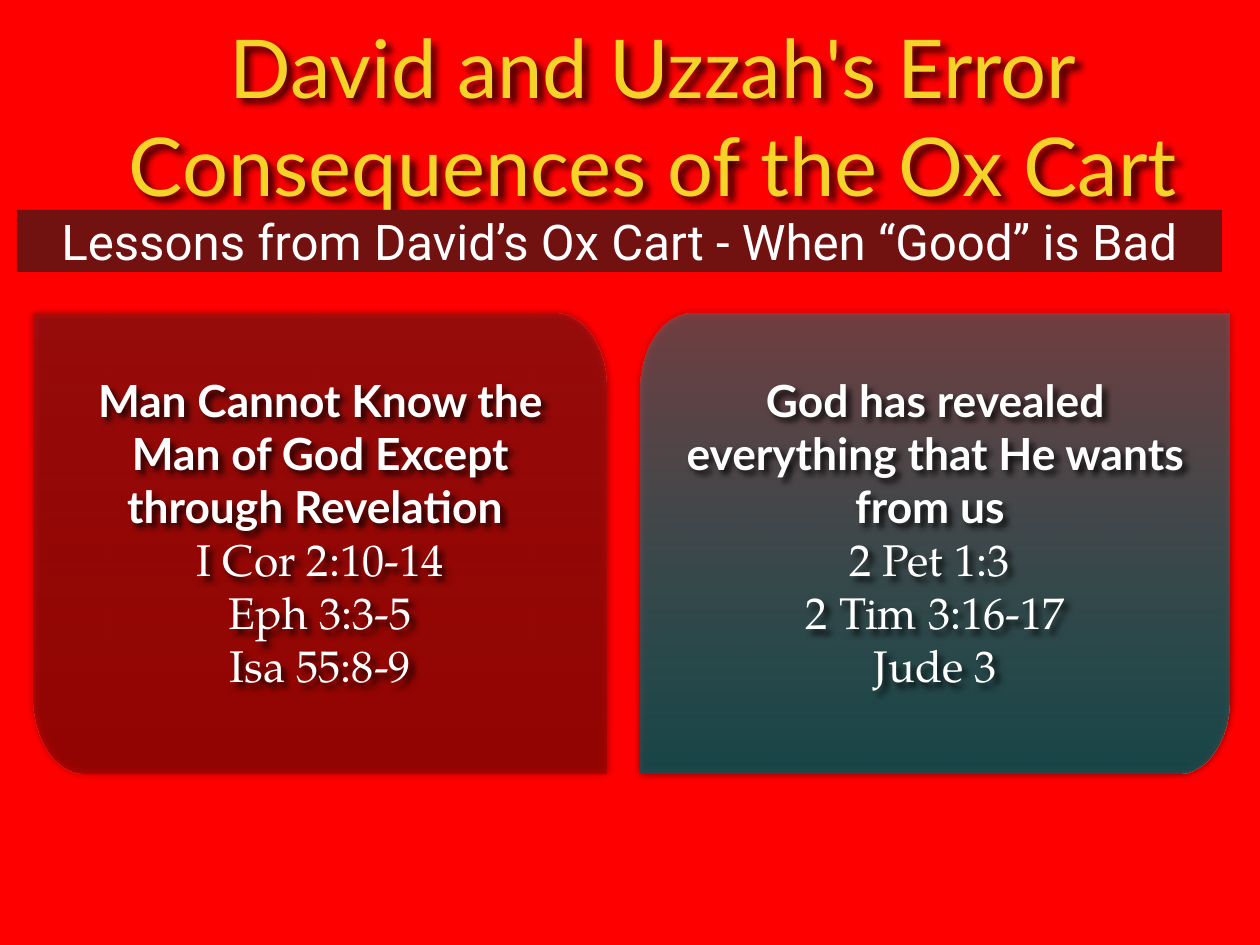
from dataclasses import dataclass
from math import cos, pi, sin

from lxml.etree import SubElement
from pptx import Presentation
from pptx.dml.color import RGBColor
from pptx.enum.text import MSO_ANCHOR as Anchor, MSO_AUTO_SIZE as AutoSize, PP_ALIGN as Align
from pptx.oxml.ns import qn
from pptx.util import Inches, Pt


@dataclass(frozen=True)
class Theme:
    background: str = "FF0000"
    title: str = "F5D328"
    text: str = "FFFFFF"
    banner: str = "711211"
    shadow: str = "000000"
    title_size: int = 66
    banner_size: int = 40
    panel_size: int = 36
    sans: str = "Lato"
    banner_font: str = "Roboto"
    serif: str = "TeX Gyre Pagella"


THEME = Theme()
TITLE = ["David and Uzzah's Error", "Consequences of the Ox Cart"]
BANNER = ["Lessons from David’s Ox Cart - When “Good” is Bad"]
PANELS = [
    {
        "heading": "Man Cannot Know the Man of God Except through Revelation ",
        "verses": ["I Cor 2:10-14", "Eph 3:3-5", "Isa 55:8-9"],
        "left": 0.38, "width": 6.47, "mirrored": True,
        "stops": [("971817", 51), ("720C04", 41)],
    },
    {
        "heading": "God has revealed everything that He wants from us ",
        "verses": ["2 Pet 1:3 ", "2 Tim 3:16-17", "Jude 3"],
        "left": 7.23, "width": 6.65, "mirrored": False,
        "stops": [("00A6AC", 37), ("005C5F", 76)],
    },
]
TITLE_BOX = (0.52, 0.19, 13.7, 2.22)
BANNER_BOX = (0.19, 2.37, 13.6, 0.7)
PANEL_TOP, PANEL_HEIGHT = 3.54, 5.19
CORNER_WIDTH, CORNER_HEIGHT, CORNER_STEPS = 0.58, 0.86, 24
TEXT_TOP, TEXT_WIDTH, TEXT_HEIGHT = 4.19, 6.07, 3.64


def color(value):
    return RGBColor.from_string(value)


def apply(target, values):
    for name, value in values.items():
        setattr(target, name, value)


def place(shape, box):
    apply(shape, dict(zip(("left", "top", "width", "height"), map(Inches, box))))


def text_format(font, size, fill, bold=False):
    return {"name": font, "size": Pt(size), "bold": bold}, fill


def write(shape, lines):
    frame = shape.text_frame
    apply(frame, {
        "word_wrap": True, "auto_size": AutoSize.NONE, "vertical_anchor": Anchor.MIDDLE,
        "margin_left": 0, "margin_top": 0, "margin_right": 0, "margin_bottom": 0,
    })
    for index, (text, (values, fill)) in enumerate(lines):
        paragraph = frame.add_paragraph() if index else frame.paragraphs[0]
        properties = paragraph._p.get_or_add_pPr()
        apply(paragraph, {"alignment": Align.CENTER, "space_before": Pt(0)})
        properties.set("marL", "0")
        properties.set("indent", "0")
        SubElement(properties, qn("a:buNone"))
        run = paragraph.add_run()
        run.text = text
        apply(run.font, values)
        run.font.color.rgb = color(fill)


def add_shadow(shape, blur, distance, angle, opacity):
    shape.shadow.inherit = False
    effects = shape._element.spPr.find(qn("a:effectLst"))
    shadow = SubElement(effects, qn("a:outerShdw"), blurRad=str(Pt(blur)),
                        dist=str(Pt(distance)), dir=str(angle * 60000), rotWithShape="0")
    shade = SubElement(shadow, qn("a:srgbClr"), val=THEME.shadow)
    SubElement(shade, qn("a:alpha"), val=str(opacity * 1000))


def corner_arc(center_x, center_y, start):
    angles = [start + pi / 2 * step / CORNER_STEPS for step in range(CORNER_STEPS + 1)]
    return [(center_x + CORNER_WIDTH * cos(angle), center_y + CORNER_HEIGHT * sin(angle))
            for angle in angles]


def panel_outline(left, width, mirrored):
    right, bottom = left + width, PANEL_TOP + PANEL_HEIGHT
    points = corner_arc(left + CORNER_WIDTH, PANEL_TOP + CORNER_HEIGHT, pi)
    points.append((right, PANEL_TOP))
    points += corner_arc(right - CORNER_WIDTH, bottom - CORNER_HEIGHT, 0)
    points.append((left, bottom))
    return [(Inches(left + right - x if mirrored else x), Inches(y)) for x, y in points]


def add_panel(slide, panel):
    left, width = panel["left"], panel["width"]
    start, *rest = panel_outline(left, width, panel["mirrored"])
    builder = slide.shapes.build_freeform(*start)
    builder.add_line_segments(rest, close=True)
    shape = builder.convert_to_shape()
    shape.line.fill.background()
    shape.fill.gradient()
    shape.fill.gradient_angle = 270
    for stop, (value, _) in zip(shape.fill.gradient_stops, panel["stops"]):
        stop.color.rgb = color(value)
    shades = shape._element.spPr.find(qn("a:gradFill")).iter(qn("a:srgbClr"))
    for shade, (_, opacity) in zip(list(shades), panel["stops"]):
        SubElement(shade, qn("a:alpha"), val=str(opacity * 1000))
    add_shadow(shape, 6, 0, 315, 80)

    box = (left + (width - TEXT_WIDTH) / 2, TEXT_TOP, TEXT_WIDTH, TEXT_HEIGHT)
    label = slide.shapes.add_textbox(*map(Inches, box))
    heading = text_format(THEME.sans, THEME.panel_size, THEME.text, True)
    verse = text_format(THEME.serif, THEME.panel_size, THEME.text)
    write(label, [(panel["heading"], heading)] + [(text, verse) for text in panel["verses"]])
    add_shadow(label, 5, 5, 45, 80)


def main():
    presentation = Presentation()
    apply(presentation, {"slide_width": Inches(14.22), "slide_height": Inches(10.67)})
    slide = presentation.slides.add_slide(presentation.slide_layouts[1])
    slide.background.fill.solid()
    slide.background.fill.fore_color.rgb = color(THEME.background)

    title, banner = slide.shapes.title, slide.placeholders[1]
    place(title, TITLE_BOX)
    title_style = text_format(THEME.sans, THEME.title_size, THEME.title)
    write(title, [(text, title_style) for text in TITLE])
    add_shadow(title, 5, 5, 45, 80)

    place(banner, BANNER_BOX)
    banner.fill.solid()
    banner.fill.fore_color.rgb = color(THEME.banner)
    banner_style = text_format(THEME.banner_font, THEME.banner_size, THEME.text)
    write(banner, [(text, banner_style) for text in BANNER])

    for panel in PANELS:
        add_panel(slide, panel)
    presentation.save("out.pptx")


if __name__ == "__main__":
    main()
